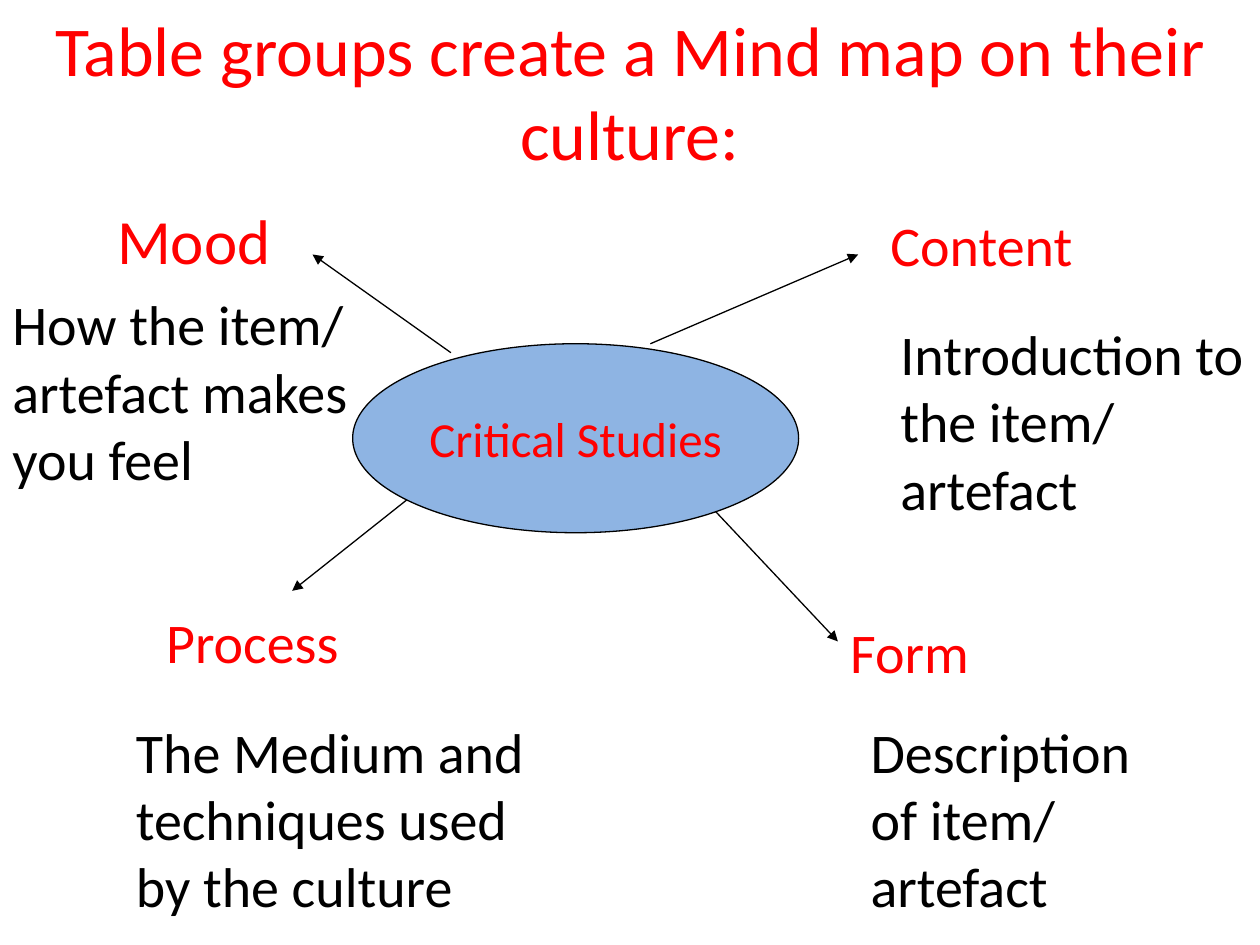
from dataclasses import dataclass

from lxml import etree
from pptx import Presentation
from pptx.dml.color import RGBColor
from pptx.enum.shapes import MSO_CONNECTOR, MSO_SHAPE
from pptx.enum.text import MSO_ANCHOR, MSO_AUTO_SIZE, PP_ALIGN
from pptx.oxml.ns import qn
from pptx.util import Cm, Pt

LEFT, CENTER = PP_ALIGN.LEFT, PP_ALIGN.CENTER
TOP, MIDDLE = MSO_ANCHOR.TOP, MSO_ANCHOR.MIDDLE
NO_FIT = MSO_AUTO_SIZE.NONE
OVAL, STRAIGHT = MSO_SHAPE.OVAL, MSO_CONNECTOR.STRAIGHT
TITLE_ONLY = 5


@dataclass(frozen=True)
class Theme:
    font: str = "Calibri"
    accent: RGBColor = RGBColor(0xFF, 0x00, 0x00)
    ink: RGBColor = RGBColor(0x00, 0x00, 0x00)
    hub: RGBColor = RGBColor(0x8E, 0xB4, 0xE3)
    title_size: int = 40
    body_size: int = 32
    hub_size: int = 28
    line_width: float = 0.75


THEME = Theme()
NOTE_HEIGHT = 4.37

# Boxes are left, top, width, height in cm; heading is offset, width, size;
# arrow is start x, start y, end x, end y.
BRANCHES = [
    dict(box=(17.7, 4.11, 7.7, 6.58), heading=("Content", 0, 5.79, 32),
         note=("Introduction to the item/ artefact", 0.2, 7.5),
         arrow=(13.11, 6.93, 17.3, 5.13)),
    dict(box=(16.89, 12.32, 6.81, 6.38), heading=("Form", 0, 5.99, 32),
         note=("Description of item/ artefact", 0.41, 6.4),
         arrow=(13.69, 9.53, 16.89, 12.93)),
    dict(box=(0, 3.94, 7.9, 6.15), heading=("Mood", 2.11, 3.99, 36),
         note=("How the item/ artefact makes you feel", 0, 7.9),
         arrow=(9.09, 7.11, 6.3, 5.13)),
    dict(box=(2.49, 12.12, 8.79, 6.58), heading=("Process", 0.61, 4.8, 32),
         note=("The Medium and techniques used by the culture", 0, 8.79),
         arrow=(8.89, 9.53, 5.89, 11.91)),
]


def write(sp, text, size, color, align=LEFT, anchor=TOP, wrap=True):
    tf = sp.text_frame
    frame = dict(auto_size=NO_FIT, word_wrap=wrap, vertical_anchor=anchor)
    for name, value in frame.items():
        setattr(tf, name, value)
    p = tf.paragraphs[0]
    p.alignment = align
    r = p.add_run()
    r.text = text
    for name, value in dict(name=THEME.font, size=Pt(size)).items():
        setattr(r.font, name, value)
    r.font.color.rgb = color


def outline(sp):
    sp.line.color.rgb = THEME.ink
    sp.line.width = Pt(THEME.line_width)


def add_title(s, box, text):
    sp = s.shapes.title
    sp.left, sp.top, sp.width, sp.height = map(Cm, box)
    write(sp, text, THEME.title_size, THEME.accent, CENTER)


def add_arrow(s, points):
    sp = s.shapes.add_connector(STRAIGHT, *map(Cm, points))
    outline(sp)
    etree.SubElement(sp.line._get_or_add_ln(), qn("a:tailEnd"), type="triangle")
    etree.SubElement(sp._element.spPr, qn("a:effectLst"))


def add_branch(s, box, heading, note, arrow):
    left, top, _, height = box
    # Heading at the top of the box
    text, dx, width, size = heading
    sp = s.shapes.add_textbox(Cm(left + dx), Cm(top), Cm(width), Cm(size * 0.05))
    write(sp, text, size, THEME.accent)
    # Explanation along the bottom of the box
    text, dx, width = note
    sp = s.shapes.add_textbox(Cm(left + dx), Cm(top + height - NOTE_HEIGHT),
                              Cm(width), Cm(NOTE_HEIGHT))
    write(sp, text, THEME.body_size, THEME.ink)
    add_arrow(s, arrow)


def add_hub(s, box, text):
    sp = s.shapes.add_shape(OVAL, *map(Cm, box))
    sp.shadow.inherit = False
    sp.fill.solid()
    sp.fill.fore_color.rgb = THEME.hub
    outline(sp)
    write(sp, text, THEME.hub_size, THEME.accent, CENTER, MIDDLE, wrap=False)


def main():
    prs = Presentation()
    prs.slide_width, prs.slide_height = Cm(25.4), Cm(19.05)
    s = prs.slides.add_slide(prs.slide_layouts[TITLE_ONLY])
    add_title(s, (0, 0, 25.4, 3.68),
              "Table groups create a Mind map on their culture:")
    for branch in BRANCHES:
        add_branch(s, **branch)
    add_hub(s, (7.11, 6.93, 8.99, 3.81), "Critical Studies")
    prs.save("out.pptx")


if __name__ == "__main__":
    main()
